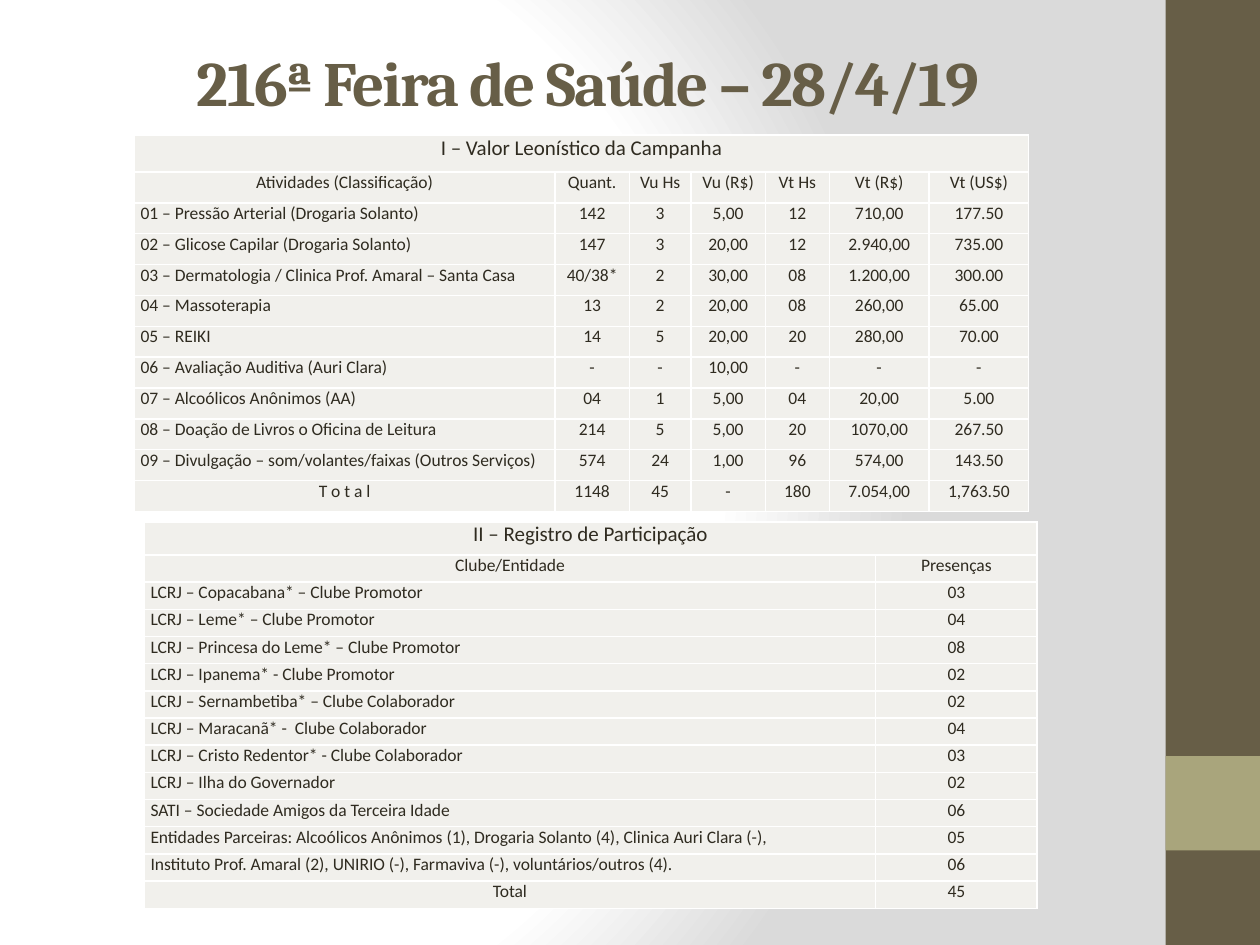
from lxml import etree
from pptx import Presentation
from pptx.dml.color import RGBColor
from pptx.enum import shapes, text
from pptx.oxml import parse_xml
from pptx.oxml.ns import nsdecls, qn
from pptx.util import Pt

COLORS = {
    "brown": "675E47",
    "olive": "A9A57C",
    "ink": "2F2B20",
    "cell": "F1F0EC",
    "white": "FFFFFF",
    "grey": "DADADA",
}
TITLE = "216ª Feira de Saúde – 28/4/19"
SIDE_BARS = [  # left, top, width, height, colour
    (666, 0, 54, 540, "brown"),
    (666, 432, 54, 54, "olive"),
]
CAMPAIGN = {
    "title": "I – Valor Leonístico da Campanha",
    "position": (76.75, 77.2),
    "columns": [240.3, 42.6, 35.2, 42.5, 36.6, 57, 57],
    "title_height": 21.1,
    "row_height": 17.65,
    "rows": [
        ("Atividades (Classificação)", "Quant.", "Vu Hs", "Vu (R$)", "Vt Hs", "Vt (R$)", "Vt (US$)"),
        ("01 – Pressão Arterial (Drogaria Solanto)", "142", "3", "5,00", "12", "710,00", "177.50"),
        ("02 – Glicose Capilar (Drogaria Solanto)", "147", "3", "20,00", "12", "2.940,00", "735.00"),
        ("03 – Dermatologia / Clinica Prof. Amaral – Santa Casa", "40/38*", "2", "30,00", "08", "1.200,00", "300.00"),
        ("04 – Massoterapia", "13", "2", "20,00", "08", "260,00", "65.00"),
        ("05 – REIKI", "14", "5", "20,00", "20", "280,00", "70.00"),
        ("06 – Avaliação Auditiva (Auri Clara)", "-", "-", "10,00", "-", "-", "-"),
        ("07 – Alcoólicos Anônimos (AA)", "04", "1", "5,00", "04", "20,00", "5.00"),
        ("08 – Doação de Livros o Oficina de Leitura", "214", "5", "5,00", "20", "1070,00", "267.50"),
        ("09 – Divulgação – som/volantes/faixas (Outros Serviços)", "574", "24", "1,00", "96", "574,00", "143.50"),
        ("T o t a l", "1148", "45", "-", "180", "7.054,00", "1,763.50"),
    ],
}
ATTENDANCE = {
    "title": "II – Registro de Participação",
    "position": (82.4, 298.2),
    "columns": [418, 92.2],
    "title_height": 18.9,
    "row_height": 15.55,
    "rows": [
        ("Clube/Entidade", "Presenças"),
        ("LCRJ – Copacabana* – Clube Promotor", "03"),
        ("LCRJ – Leme* – Clube Promotor", "04"),
        ("LCRJ – Princesa do Leme* – Clube Promotor", "08"),
        ("LCRJ – Ipanema* - Clube Promotor", "02"),
        ("LCRJ – Sernambetiba* – Clube Colaborador", "02"),
        ("LCRJ – Maracanã* -  Clube Colaborador", "04"),
        ("LCRJ – Cristo Redentor* - Clube Colaborador", "03"),
        ("LCRJ – Ilha do Governador", "02"),
        ("SATI – Sociedade Amigos da Terceira Idade", "06"),
        ("Entidades Parceiras: Alcoólicos Anônimos (1), Drogaria Solanto (4), Clinica Auri Clara (-),", "05"),
        ("Instituto Prof. Amaral (2), UNIRIO (-), Farmaviva (-), voluntários/outros (4).", "06"),
        ("Total", "45"),
    ],
}


def color(name):
    return RGBColor.from_string(COLORS[name])


def set_background(slide):
    """Circular gradient, white on the left and grey on the right."""
    stops = "".join(
        f'<a:gs pos="{percent * 1000}"><a:srgbClr val="{COLORS[name]}"/></a:gs>'
        for percent, name in [(0, "white"), (75, "white"), (100, "grey")]
    )
    background = parse_xml(
        f'<p:bg {nsdecls("p", "a")}><p:bgPr><a:gradFill rotWithShape="1">'
        f'<a:gsLst>{stops}</a:gsLst><a:path path="circle">'
        '<a:fillToRect l="20000" t="50000" r="100000" b="50000"/></a:path>'
        "</a:gradFill><a:effectLst/></p:bgPr></p:bg>"
    )
    slide.element.cSld.insert(0, background)


def add_bar(slide, left, top, width, height, fill):
    bar = slide.shapes.add_shape(
        shapes.MSO_SHAPE.RECTANGLE, Pt(left), Pt(top), Pt(width), Pt(height))
    bar.shadow.inherit = False
    bar.fill.solid()
    bar.fill.fore_color.rgb = color(fill)
    bar.line.fill.background()


def add_title(slide):
    frame = slide.shapes.add_textbox(Pt(36), Pt(21.6), Pt(600), Pt(49.7)).text_frame
    frame.word_wrap = True
    frame.vertical_anchor = text.MSO_ANCHOR.MIDDLE
    paragraph = frame.paragraphs[0]
    paragraph.alignment = text.PP_ALIGN.CENTER
    run = paragraph.add_run()
    run.text = TITLE
    run.font.name = "Cambria"
    run.font.size = Pt(36)
    run.font.bold = True
    run.font.color.rgb = color("brown")
    run.font._element.set("spc", "-100")


def set_borders(cell):
    properties = cell._tc.get_or_add_tcPr()
    for side in ("a:lnL", "a:lnR", "a:lnT", "a:lnB"):
        line = etree.SubElement(properties, qn(side), w=str(Pt(1)))
        fill = etree.SubElement(line, qn("a:solidFill"))
        etree.SubElement(fill, qn("a:srgbClr"), val=COLORS["white"])


def format_cell(cell, content, size, alignment):
    set_borders(cell)
    cell.fill.solid()
    cell.fill.fore_color.rgb = color("cell")
    cell.margin_left = cell.margin_right = Pt(3.6)
    cell.margin_top = cell.margin_bottom = 0
    paragraph = cell.text_frame.paragraphs[0]
    paragraph.text = content
    paragraph.alignment = alignment
    paragraph.font.name = "Calibri"
    paragraph.font.size = Pt(size)
    paragraph.font.bold = False
    paragraph.font.color.rgb = color("ink")


def add_data_table(slide, data):
    columns, rows = data["columns"], data["rows"]
    heights = [data["title_height"]] + [data["row_height"]] * len(rows)
    left, top = data["position"]
    table = slide.shapes.add_table(
        len(heights), len(columns), Pt(left), Pt(top), Pt(sum(columns)), Pt(sum(heights))).table
    table.first_row = table.horz_banding = False
    for column, width in zip(table.columns, columns):
        column.width = Pt(width)
    for row, height in zip(table.rows, heights):
        row.height = Pt(height)

    title_row = [data["title"]] + [""] * (len(columns) - 1)
    last = len(rows)
    for r, values in enumerate([title_row, *rows]):
        for c, value in enumerate(values):
            is_label = c == 0 and 1 < r < last
            alignment = text.PP_ALIGN.LEFT if is_label else text.PP_ALIGN.CENTER
            format_cell(table.cell(r, c), value, 12 if r == 0 else 10, alignment)
    table.cell(0, 0).merge(table.cell(0, len(columns) - 1))


def main():
    presentation = Presentation()
    presentation.slide_width, presentation.slide_height = Pt(720), Pt(540)
    slide = presentation.slides.add_slide(presentation.slide_layouts[6])
    set_background(slide)
    for bar in SIDE_BARS:
        add_bar(slide, *bar)
    add_title(slide)
    for data in (CAMPAIGN, ATTENDANCE):
        add_data_table(slide, data)
    presentation.save("out.pptx")


if __name__ == "__main__":
    main()
